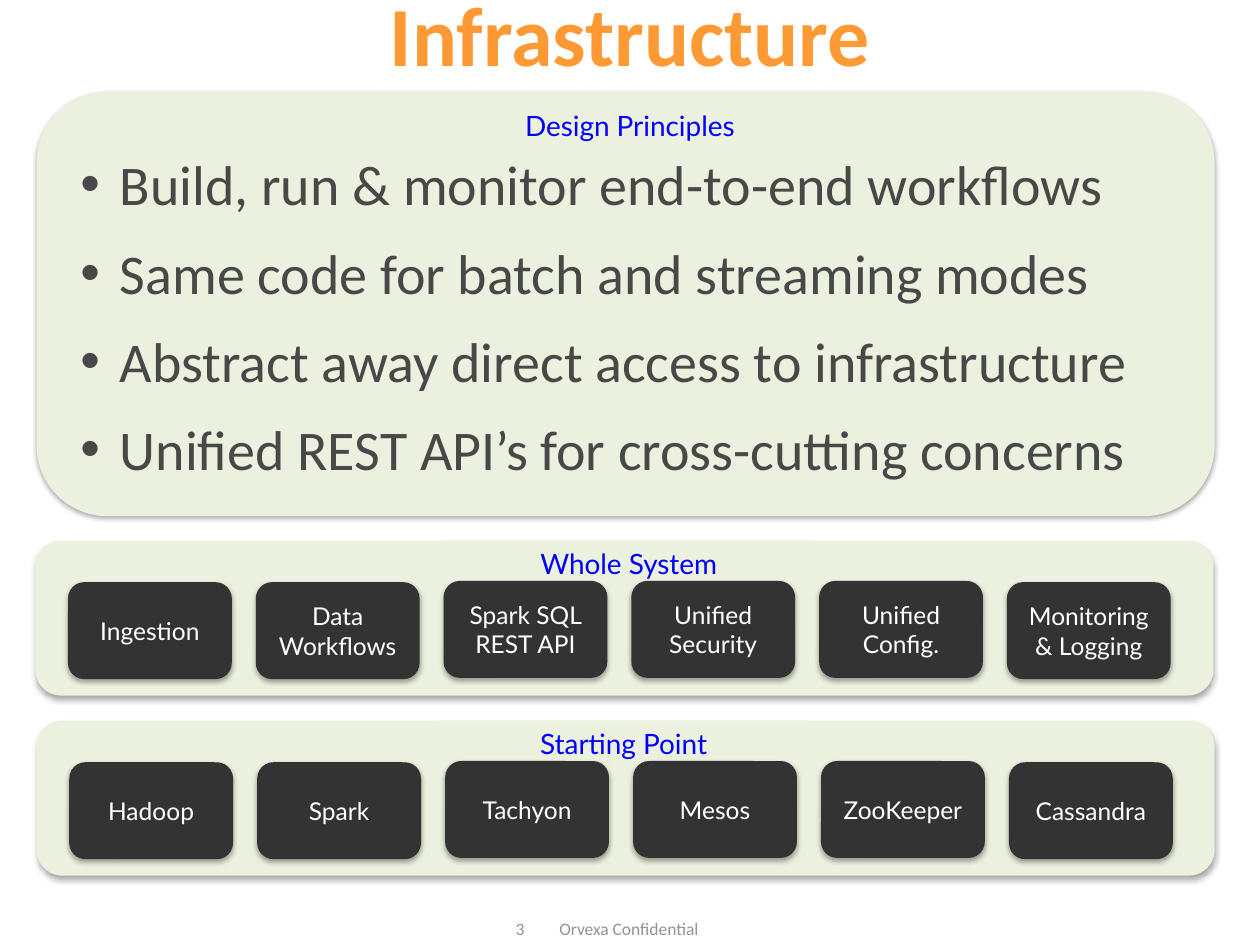
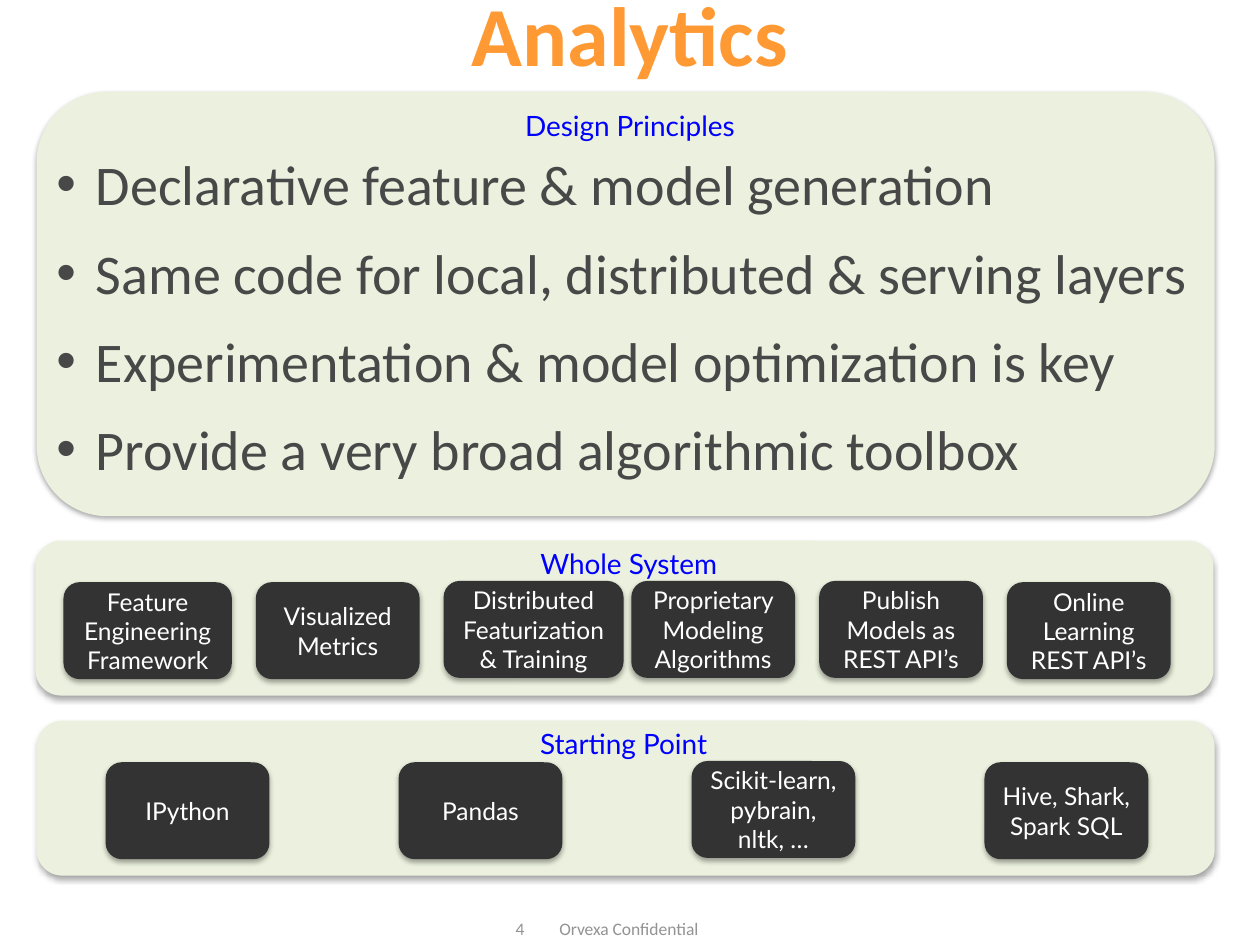
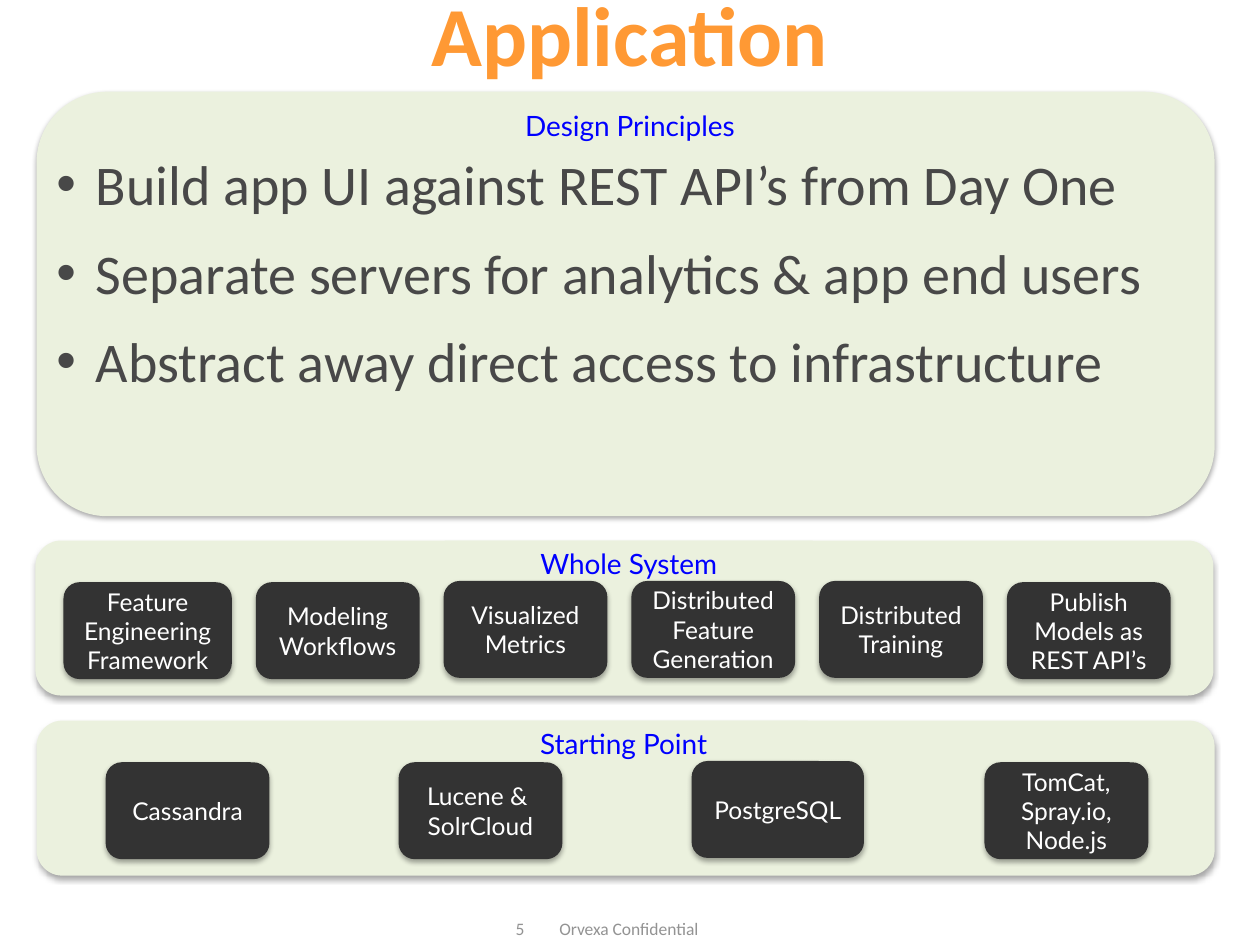
from dataclasses import dataclass
from typing import NamedTuple

from lxml import etree
from pptx import Presentation
from pptx.dml.color import RGBColor
from pptx.enum.shapes import MSO_SHAPE
from pptx.enum.text import MSO_ANCHOR, MSO_AUTO_SIZE, PP_ALIGN
from pptx.oxml.ns import qn
from pptx.util import Pt

RECT, ROUNDED = MSO_SHAPE.RECTANGLE, MSO_SHAPE.ROUNDED_RECTANGLE
TOP, MIDDLE = MSO_ANCHOR.TOP, MSO_ANCHOR.MIDDLE
LEFT, CENTER, RIGHT = PP_ALIGN.LEFT, PP_ALIGN.CENTER, PP_ALIGN.RIGHT
GROW = MSO_AUTO_SIZE.SHAPE_TO_FIT_TEXT


class TextStyle(NamedTuple):
    font: str
    size: float
    color: str
    bold: bool = False


@dataclass(frozen=True)
class Theme:
    panel: str = "EBF1DE"
    tile: str = "333333"
    shadow: str = "000000"
    bullet_font: str = "Arial"
    title: TextStyle = TextStyle("Calibri", 48, "FF9934", True)
    principle: TextStyle = TextStyle("Calibri", 32, "484848")
    caption: TextStyle = TextStyle("Lato", 16, "0000FF")
    tile_label: TextStyle = TextStyle("Lato", 14, "FFFFFF")
    footer: TextStyle = TextStyle("Calibri", 10, "939393")


THEME = Theme()


class Box(NamedTuple):
    """Left, top, width and height in points."""
    left: float
    top: float
    width: float
    height: float

    def lengths(self) -> list[Pt]:
        return [Pt(value) for value in self]


class Tile(NamedTuple):
    label: str
    extra_left: float = 0
    extra_right: float = 0


class Panel(NamedTuple):
    caption: str
    box: Box
    caption_left: float
    caption_drop: float = 0


class Topic(NamedTuple):
    title: str
    page: int
    principles: list[str]
    principles_box: Box
    whole_system: list[Tile]
    starting_point: list[Tile]


class Row(NamedTuple):
    """Left edge of the first tile and distance between tiles."""
    left: float
    pitch: float


# Shared layout
TITLE_BOX = Box(36, -0.4, 648, 52.6)
PAGE_BOX = Box(139, 516.2, 167.8, 28.8)
FOOTER_BOX = Box(312.5, 521.3, 120, 19.4)
FOOTER_TEXT = "Orvexa Confidential"
CAPTION_WIDTH, CAPTION_HEIGHT = 210.2, 26.6
TILE_WIDTH, TILE_HEIGHT, TILE_DROP = 93.6, 55.4, 23.8
TILE_LIFT = 0.7
BULLET_INDENT = 22.5

DESIGN_PRINCIPLES = Panel("Design Principles", Box(20.9, 52.4, 673.2, 242.6), 254.9, 6)
WHOLE_SYSTEM = Panel("Whole System", Box(20.2, 308.9, 673.2, 88.6), 254.2)
STARTING_POINT = Panel("Starting Point", Box(20.9, 411.8, 673.2, 88.6), 251.3)
WHOLE_ROW = Row(38.9, 107.3)
STARTING_ROWS = {6: Row(39.6, 107.4), 4: Row(60.4, 167.4)}

# Slide content
FRAMEWORK = Tile("Feature Engineering Framework", extra_left=2.6)
TOPICS = [
    Topic(
        "Infrastructure", 3,
        ["Build, run & monitor end-to-end workflows",
         "Same code for batch and streaming modes",
         "Abstract away direct access to infrastructure",
         "Unified REST API’s for cross-cutting concerns"],
        Box(38.9, 82.1, 625.7, 198.7),
        [Tile("Ingestion"), Tile("Data Workflows"), Tile("Spark SQL REST API"),
         Tile("Unified Security"), Tile("Unified Config."), Tile("Monitoring & Logging")],
        [Tile("Hadoop"), Tile("Spark"), Tile("Tachyon"),
         Tile("Mesos"), Tile("ZooKeeper"), Tile("Cassandra")],
    ),
    Topic(
        "Analytics", 4,
        ["Declarative feature & model generation",
         "Same code for local, distributed & serving layers",
         "Experimentation & model optimization is key",
         "Provide a very broad algorithmic toolbox"],
        Box(25.2, 82.1, 672.5, 249.8),
        [FRAMEWORK, Tile("Visualized Metrics"),
         Tile("Distributed Featurization & Training", extra_right=9.2),
         Tile("Proprietary Modeling Algorithms"),
         Tile("Publish Models as REST API’s"), Tile("Online Learning REST API’s")],
        [Tile("IPython"), Tile("Pandas"),
         Tile("Scikit-learn, pybrain, nltk, …"), Tile("Hive, Shark, Spark SQL")],
    ),
    Topic(
        "Application", 5,
        ["Build app UI against REST API’s from Day One",
         "Separate servers for analytics & app end users",
         "Abstract away direct access to infrastructure"],
        Box(25.2, 82.1, 672.5, 147.6),
        [FRAMEWORK, Tile("Modeling Workflows"), Tile("Visualized Metrics"),
         Tile("Distributed Feature Generation"), Tile("Distributed Training"),
         Tile("Publish Models as REST API’s")],
        [Tile("Cassandra"), Tile("Lucene & \vSolrCloud"),
         Tile("PostgreSQL", extra_right=4.9), Tile("TomCat,\vSpray.io, Node.js")],
    ),
]


# Drawing helpers
def write(shape, text: str, style: TextStyle, align=CENTER, anchor=MIDDLE) -> None:
    frame = shape.text_frame
    frame.word_wrap = True
    frame.vertical_anchor = anchor
    frame.text = text
    for paragraph in frame.paragraphs:
        paragraph.alignment = align
        for run in paragraph.runs:
            run.font.name = style.font
            run.font.size = Pt(style.size)
            run.font.bold = style.bold
            run.font.color.rgb = RGBColor.from_string(style.color)


def add_filled(slide, kind, box: Box, color: str, shadow: bool = True):
    shape = slide.shapes.add_shape(kind, *box.lengths())
    shape.fill.solid()
    shape.fill.fore_color.rgb = RGBColor.from_string(color)
    shape.line.fill.background()
    shape.shadow.inherit = False
    if shadow:
        effects = shape._element.spPr.find(qn("a:effectLst"))
        outer = etree.SubElement(effects, qn("a:outerShdw"), blurRad=str(Pt(3.1)),
                                 dist=str(Pt(1.8)), dir="5400000", rotWithShape="0")
        tint = etree.SubElement(outer, qn("a:srgbClr"), val=THEME.shadow)
        etree.SubElement(tint, qn("a:alpha"), val="35000")
    return shape


def add_panel(slide, panel: Panel) -> None:
    add_filled(slide, ROUNDED, panel.box, THEME.panel)
    caption_box = Box(panel.caption_left, panel.box.top + panel.caption_drop,
                      CAPTION_WIDTH, CAPTION_HEIGHT)
    caption = add_filled(slide, RECT, caption_box, THEME.panel, shadow=False)
    write(caption, panel.caption, THEME.caption, anchor=TOP)
    caption.text_frame.auto_size = GROW


def add_tiles(slide, panel: Panel, tiles: list[Tile], row: Row) -> None:
    for column, tile in enumerate(tiles):
        # Inner tiles from the third on sit slightly higher
        lift = TILE_LIFT if 2 <= column < len(tiles) - 1 else 0
        box = Box(row.left + column * row.pitch - tile.extra_left,
                  panel.box.top + TILE_DROP - lift,
                  TILE_WIDTH + tile.extra_left + tile.extra_right, TILE_HEIGHT)
        write(add_filled(slide, ROUNDED, box, THEME.tile), tile.label, THEME.tile_label)


def add_principles(slide, principles: list[str], box: Box) -> None:
    listing = slide.shapes.add_textbox(*box.lengths())
    write(listing, "\n".join(principles), THEME.principle, LEFT, TOP)
    listing.text_frame.auto_size = GROW
    for index, paragraph in enumerate(listing.text_frame.paragraphs):
        properties = paragraph._p.get_or_add_pPr()
        properties.set("marL", str(Pt(BULLET_INDENT)))
        properties.set("indent", str(-Pt(BULLET_INDENT)))
        etree.SubElement(properties, qn("a:buFont"), typeface=THEME.bullet_font)
        etree.SubElement(properties, qn("a:buChar"), char="•")
        if index:
            paragraph.space_before = Pt(12)


def add_frame(slide, title: str, page: int) -> None:
    number = slide.shapes.add_textbox(*PAGE_BOX.lengths())
    write(number, str(page), THEME.footer, RIGHT)
    footer = slide.shapes.add_textbox(*FOOTER_BOX.lengths())
    write(footer, FOOTER_TEXT, THEME.footer, LEFT, TOP)
    heading = slide.shapes.add_textbox(*TITLE_BOX.lengths())
    write(heading, title, THEME.title)
    heading.text_frame.paragraphs[0].line_spacing = 0.7


def add_topic(deck, topic: Topic) -> None:
    slide = deck.slides.add_slide(deck.slide_layouts[6])
    add_frame(slide, topic.title, topic.page)
    add_panel(slide, STARTING_POINT)
    add_tiles(slide, STARTING_POINT, topic.starting_point,
              STARTING_ROWS[len(topic.starting_point)])
    add_panel(slide, WHOLE_SYSTEM)
    add_tiles(slide, WHOLE_SYSTEM, topic.whole_system, WHOLE_ROW)
    add_panel(slide, DESIGN_PRINCIPLES)
    add_principles(slide, topic.principles, topic.principles_box)


def main() -> None:
    deck = Presentation()
    deck.slide_width, deck.slide_height = Pt(720), Pt(540)
    for topic in TOPICS:
        add_topic(deck, topic)
    deck.save("out.pptx")


if __name__ == "__main__":
    main()
